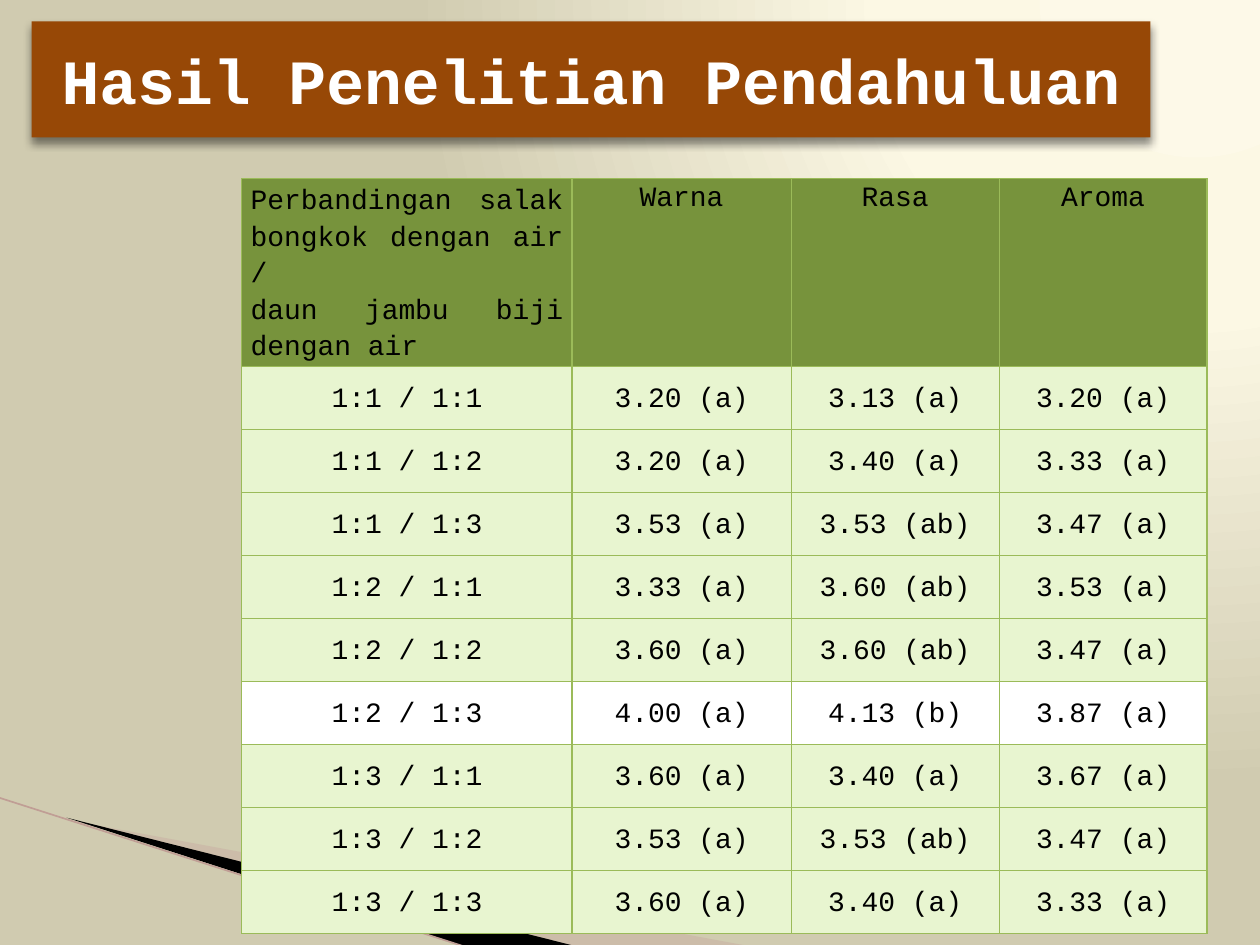
from pptx import Presentation
from pptx.dml.color import RGBColor
from pptx.enum import shapes, text
from pptx.oxml import parse_xml
from pptx.oxml.ns import nsdecls, qn
from pptx.util import Inches, Pt

FONT = "Courier New"
WHITE = RGBColor(0xFF, 0xFF, 0xFF)
BLACK = RGBColor(0x00, 0x00, 0x00)
BROWN = RGBColor(0x97, 0x48, 0x06)
ROSE = RGBColor(0xC6, 0xA7, 0x9F)
DARK_ROSE = RGBColor(0xC0, 0x9E, 0x95)
HEADER_GREEN = RGBColor(0x77, 0x93, 0x3C)
PALE_GREEN = RGBColor(0xE8, 0xF5, 0xD0)
BORDER_GREEN = RGBColor(0x9B, 0xBB, 0x59)


def write(frame, content, size=16, color=BLACK, bold=False,
          align=text.PP_ALIGN.CENTER, spacing=1.0):
    """Fill a text frame, one paragraph for each line of content."""
    for index, line in enumerate(content.split("\n")):
        para = frame.add_paragraph() if index else frame.paragraphs[0]
        para.alignment = align
        para.line_spacing = spacing
        para.space_before = Pt(0)
        span = para.add_run()
        span.text = line
        span.font.name = FONT
        span.font.size = Pt(size)
        span.font.bold = bold
        span.font.color.rgb = color


def add_borders(cell, color, width):
    properties = cell._tc.get_or_add_tcPr()
    for side in ("lnL", "lnR", "lnT", "lnB"):
        properties.append(parse_xml(
            f'<a:{side} {nsdecls("a")} w="{Pt(width)}"><a:solidFill>'
            f'<a:srgbClr val="{color}"/></a:solidFill></a:{side}>'))


deck = Presentation()
deck.slide_width, deck.slide_height = Inches(10), Inches(7.5)
page = deck.slides.add_slide(deck.slide_layouts[5])

# Background: a glow from beyond the top right corner
page.background.fill.gradient()
old_gradient = page.background._cSld.find(".//" + qn("a:gradFill"))
stops = "".join(
    f'<a:gs pos="{position * 1000}"><a:srgbClr val="{color}"/></a:gs>'
    for position, color in ((0, "FDF9E8"), (40, "FCF8E4"), (100, "D0CBB0")))
old_gradient.getparent().replace(old_gradient, parse_xml(
    f'<a:gradFill {nsdecls("a")} rotWithShape="1"><a:gsLst>{stops}</a:gsLst>'
    '<a:path path="circle"><a:fillToRect l="95000" t="-106000" r="5000" b="206000"/>'
    '</a:path></a:gradFill>'))

# Wedges and line in the lower left corner
wedges = [
    (ROSE, 40, [(0.55, 6.51), (5.95, 7.51), (4.56, 7.51)]),
    (BLACK, 100, [(0.53, 6.49), (4.57, 7.51), (3.72, 7.52)]),
]
for color, opacity, points in wedges:
    start, *rest = [(Inches(x), Inches(y)) for x, y in points]
    builder = page.shapes.build_freeform(*start)
    builder.add_line_segments(rest, close=True)
    wedge = builder.convert_to_shape()
    wedge.shadow.inherit = False
    wedge.line.fill.background()
    wedge.fill.solid()
    wedge.fill.fore_color.rgb = color
    if opacity < 100:
        wedge._element.spPr.find(".//" + qn("a:srgbClr")).append(
            parse_xml(f'<a:alpha {nsdecls("a")} val="{opacity * 1000}"/>'))

edge = page.shapes.add_connector(shapes.MSO_CONNECTOR.STRAIGHT, Inches(-0.01),
                                 Inches(6.33), Inches(3.71), Inches(7.52))
edge.line.color.rgb = DARK_ROSE
edge.line.width = Pt(0.95)
edge._element.spPr.append(parse_xml(f'<a:effectLst {nsdecls("a")}/>'))

# Title in a rounded banner
title = page.shapes.title
title.left, title.top = Inches(0.25), Inches(0.17)
title.width, title.height = Inches(8.88), Inches(0.92)
title._element.spPr.append(parse_xml(
    f'<a:prstGeom {nsdecls("a")} prst="roundRect"><a:avLst/></a:prstGeom>'))
title.fill.solid()
title.fill.fore_color.rgb = BROWN
title.line.fill.background()
title._element.spPr.append(parse_xml(
    f'<a:effectLst {nsdecls("a")}><a:outerShdw blurRad="{Pt(5)}" dist="{Pt(3)}" '
    'dir="5400000" rotWithShape="0"><a:srgbClr val="000000"><a:alpha val="45000"/>'
    '</a:srgbClr></a:outerShdw></a:effectLst>'))
title.text_frame.auto_size = text.MSO_AUTO_SIZE.NONE
title.text_frame.word_wrap = True
title.text_frame.vertical_anchor = text.MSO_ANCHOR.MIDDLE
write(title.text_frame, "Hasil Penelitian Pendahuluan", size=36, color=WHITE, bold=True)

# Results table
results = [
    ("Perbandingan salak bongkok dengan air /\ndaun jambu biji dengan air",
     "Warna", "Rasa", "Aroma"),
    ("1:1 / 1:1", "3.20 (a)", "3.13 (a)", "3.20 (a)"),
    ("1:1 / 1:2", "3.20 (a)", "3.40 (a)", "3.33 (a)"),
    ("1:1 / 1:3", "3.53 (a)", "3.53 (ab)", "3.47 (a)"),
    ("1:2 / 1:1", "3.33 (a)", "3.60 (ab)", "3.53 (a)"),
    ("1:2 / 1:2", "3.60 (a)", "3.60 (ab)", "3.47 (a)"),
    ("1:2 / 1:3", "4.00 (a)", "4.13 (b)", "3.87 (a)"),
    ("1:3 / 1:1", "3.60 (a)", "3.40 (a)", "3.67 (a)"),
    ("1:3 / 1:2", "3.53 (a)", "3.53 (ab)", "3.47 (a)"),
    ("1:3 / 1:3", "3.60 (a)", "3.40 (a)", "3.33 (a)"),
]
BEST_ROW = 6
table = page.shapes.add_table(len(results), 4, Inches(1.92), Inches(1.42),
                              Inches(7.66), Inches(6)).table
table.horz_banding = False
for column, width in zip(table.columns, (2.62, 1.74, 1.65, 1.65)):
    column.width = Inches(width)
for row_index, values in enumerate(results):
    header = row_index == 0
    table.rows[row_index].height = Inches(1.49 if header else 0.5)
    row_color = {0: HEADER_GREEN, BEST_ROW: WHITE}.get(row_index, PALE_GREEN)
    for column_index, value in enumerate(values):
        cell = table.cell(row_index, column_index)
        cell.margin_left = cell.margin_right = Inches(0.07)
        cell.margin_top = cell.margin_bottom = 0
        top_label = header and column_index > 0
        cell.vertical_anchor = text.MSO_ANCHOR.TOP if top_label else text.MSO_ANCHOR.MIDDLE
        add_borders(cell, BORDER_GREEN, 0.75)
        cell.fill.solid()
        cell.fill.fore_color.rgb = row_color
        justified = header and column_index == 0
        write(cell.text_frame, value, spacing=1.15,
              align=text.PP_ALIGN.JUSTIFY if justified else text.PP_ALIGN.CENTER)

deck.save("out.pptx")
